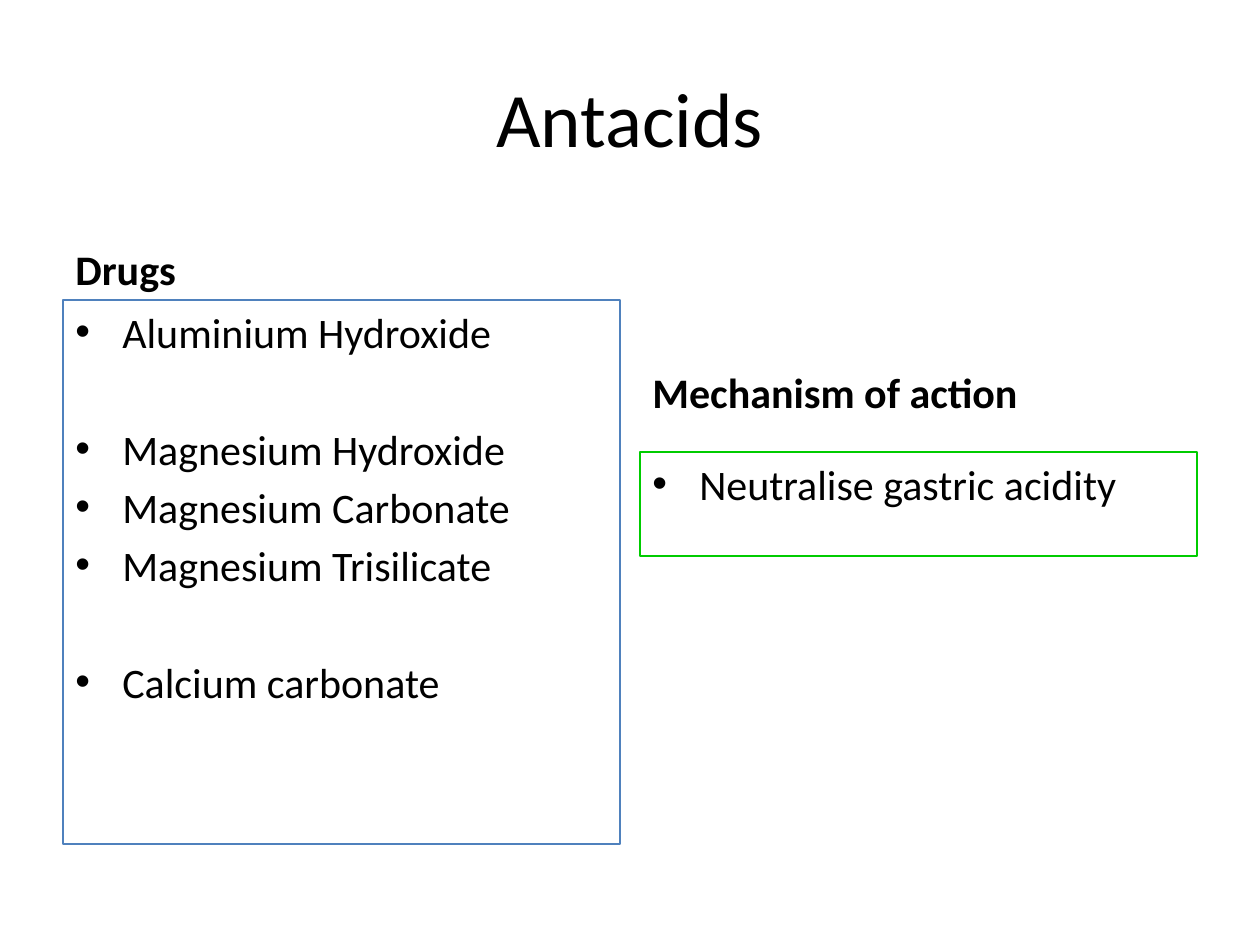
"""Build the Antacids slide: drugs on the left, mechanism of action on the right."""
import dataclasses

import lxml.etree
import pptx
import pptx.dml.color
import pptx.enum.shapes
import pptx.enum.text
import pptx.oxml.ns
import pptx.util

ALIGN = pptx.enum.text.PP_ALIGN
ANCHOR = pptx.enum.text.MSO_ANCHOR


def px(length):
    return pptx.util.Emu(round(length * 914400 / 126))


@dataclasses.dataclass(frozen=True)
class Theme:
    font: str = "Calibri"
    ink: str = "000000"
    drugs_border: str = "4F81BD"
    mechanism_border: str = "00CC00"
    title_size: int = 44
    body_size: int = 24
    line_gap: float = 4.4
    group_gap: float = 38
    border_width: float = 0.75
    indent: int = 47


def write(paragraph, text, *, theme, size, bold=False, align=ALIGN.LEFT, gap=0):
    paragraph.alignment = align
    paragraph.space_before = pptx.util.Pt(gap)
    run = paragraph.add_run()
    run.text = text
    run.font.name = theme.font
    run.font.size = pptx.util.Pt(size)
    run.font.bold = bold
    run.font.color.rgb = pptx.dml.color.RGBColor.from_string(theme.ink)


class SlideBuilder:
    def __init__(self, slide, theme):
        self.slide = slide
        self.theme = theme

    def label(self, text, left, top, width, height, *, anchor, **style):
        frame = self.slide.shapes.add_textbox(*map(px, (left, top, width, height))).text_frame
        frame.word_wrap = True
        frame.vertical_anchor = anchor
        write(frame.paragraphs[0], text, theme=self.theme, **style)

    def title(self, text, *box):
        self.label(text, *box, anchor=ANCHOR.MIDDLE,
                   size=self.theme.title_size, align=ALIGN.CENTER)

    def heading(self, text, *box):
        self.label(text, *box, anchor=ANCHOR.BOTTOM,
                   size=self.theme.body_size, bold=True)

    def bullet(self, paragraph):
        properties = paragraph._p.get_or_add_pPr()
        properties.set("marL", str(px(self.theme.indent)))
        properties.set("indent", str(-px(self.theme.indent)))
        qn = pptx.oxml.ns.qn
        lxml.etree.SubElement(properties, qn("a:buFont"), typeface="Arial")
        lxml.etree.SubElement(properties, qn("a:buChar"), char="•")

    def bullet_box(self, groups, left, top, width, height, *, border):
        box = self.slide.shapes.add_shape(
            pptx.enum.shapes.MSO_SHAPE.RECTANGLE, *map(px, (left, top, width, height)))
        box.shadow.inherit = False
        box.fill.background()
        box.line.color.rgb = pptx.dml.color.RGBColor.from_string(border)
        box.line.width = pptx.util.Pt(self.theme.border_width)
        frame = box.text_frame
        frame.word_wrap = True
        frame.vertical_anchor = ANCHOR.TOP
        paragraph = frame.paragraphs[0]
        for group_index, group in enumerate(groups):
            for item_index, item in enumerate(group):
                if group_index or item_index:
                    paragraph = frame.add_paragraph()
                starts_group = group_index and not item_index
                gap = self.theme.group_gap if starts_group else self.theme.line_gap
                write(paragraph, item, theme=self.theme, size=self.theme.body_size, gap=gap)
                self.bullet(paragraph)


def main():
    presentation = pptx.Presentation()
    presentation.slide_width, presentation.slide_height = px(1260), px(945)
    theme = Theme()
    builder = SlideBuilder(
        presentation.slides.add_slide(presentation.slide_layouts[6]), theme)
    drugs_left, mechanism_left, column_width, heading_height = 63, 640, 557, 88

    builder.title("Antacids", drugs_left, 38, 1134, 157)
    builder.heading("Drugs", drugs_left, 212, column_width, heading_height)
    drugs = [
        ["Aluminium Hydroxide"],
        ["Magnesium Hydroxide", "Magnesium Carbonate", "Magnesium Trisilicate"],
        ["Calcium carbonate"],
    ]
    builder.bullet_box(drugs, drugs_left, 300, column_width, 544, border=theme.drugs_border)
    builder.heading("Mechanism of action", mechanism_left, 335, column_width, heading_height)
    builder.bullet_box([["Neutralise gastric acidity"]], mechanism_left, 452,
                       column_width, 104, border=theme.mechanism_border)
    presentation.save("out.pptx")


if __name__ == "__main__":
    main()
